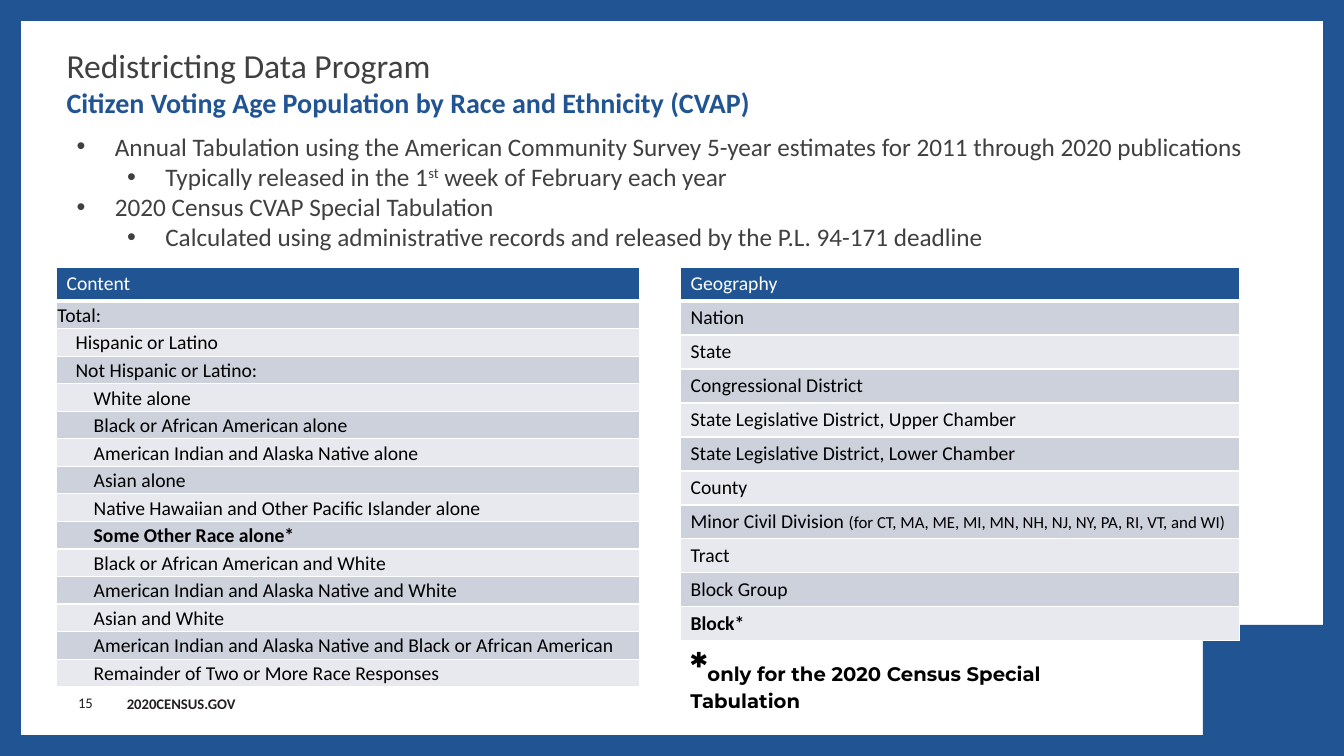
from lxml import etree
from pptx import Presentation
from pptx.dml.color import RGBColor
from pptx.enum.shapes import MSO_SHAPE
from pptx.enum.text import MSO_ANCHOR, MSO_AUTO_SIZE, PP_ALIGN
from pptx.oxml.ns import qn
from pptx.util import Inches, Pt

BLUE = RGBColor(0x20, 0x54, 0x93)
WHITE = RGBColor(0xFF, 0xFF, 0xFF)
BLACK = RGBColor(0, 0, 0)
GREY = RGBColor(0x40, 0x40, 0x40)
INK = RGBColor(0x23, 0x1F, 0x20)
BANDS = [RGBColor(0xCD, 0xD1, 0xDC), RGBColor(0xE8, 0xE9, 0xEE)]
RECTANGLE = MSO_SHAPE.RECTANGLE
TOP, MIDDLE, BOTTOM = MSO_ANCHOR.TOP, MSO_ANCHOR.MIDDLE, MSO_ANCHOR.BOTTOM
LEFT, RIGHT = PP_ALIGN.LEFT, PP_ALIGN.RIGHT
NO_FIT = MSO_AUTO_SIZE.NONE

WIDTH, HEIGHT = 13.33, 7.5
FRAME = 0.21
LEFT_COLUMN, RIGHT_COLUMN, TABLE_TOP = 0.56, 6.75, 2.65
HEADER_HEIGHT, CONTENT_ROW, GEOGRAPHY_ROW = 0.33, 0.27, 0.33
CELL_INSET, LEVEL_INDENT = 0.01, 0.18


def style(font, size, color, bold=False, name="Calibri"):
    font.size, font.bold, font.name = Pt(size), bold, name
    font.color.rgb = color


def fill_cell(cell, color, bottom_width=1):
    """Fill a cell and give it white borders."""
    cell.fill.solid()
    cell.fill.fore_color.rgb = color
    properties = cell._tc.get_or_add_tcPr()
    for place, side in enumerate(("lnL", "lnR", "lnT", "lnB")):
        width = bottom_width if side == "lnB" else 1
        line = etree.Element(qn(f"a:{side}"), w=str(Pt(width)))
        solid = etree.SubElement(line, qn("a:solidFill"))
        etree.SubElement(solid, qn("a:srgbClr"), val=str(WHITE))
        properties.insert(place, line)


deck = Presentation()
deck.slide_width, deck.slide_height = Inches(WIDTH), Inches(HEIGHT)
page = deck.slides.add_slide(deck.slide_layouts[1])
page.background.fill.solid()
page.background.fill.fore_color.rgb = BLUE
title, body = page.shapes.title, page.placeholders[1]

# White panel and blue corner, behind the placeholders
for x, y, w, h, color in (
    (FRAME, FRAME, WIDTH - 2 * FRAME, HEIGHT - 2 * FRAME, WHITE),
    (WIDTH - 1.4, HEIGHT - 1.3, 1.4, 1.3, BLUE),
):
    panel = page.shapes.add_shape(RECTANGLE, Inches(x), Inches(y), Inches(w), Inches(h))
    panel.shadow.inherit = False
    panel.fill.solid()
    panel.fill.fore_color.rgb = color
    panel.line.fill.background()
    title.element.addprevious(panel.element)

# Title and bullets
for box, x, y, w, h in ((title, LEFT_COLUMN, 0.4, 9.58, 0.84), (body, 0.66, 1.25, 12.27, 1.31)):
    box.left, box.top, box.width, box.height = Inches(x), Inches(y), Inches(w), Inches(h)
    box.text_frame.vertical_anchor = TOP
    box.text_frame.auto_size = NO_FIT

para = title.text_frame.paragraphs[0]
para.alignment = LEFT
span = para.add_run()
span.text = "Redistricting Data Program"
style(span.font, 24, GREY)
para.add_line_break()
span = para.add_run()
span.text = "Citizen Voting Age Population by Race and Ethnicity (CVAP)"
style(span.font, 20, BLUE, bold=True)

BULLETS = [
    (0, ["Annual Tabulation using the American Community Survey 5-year estimates "
         "for 2011 through 2020 publications"]),
    (1, ["Typically released in the 1", "st", " week of February each year"]),
    (0, ["2020 Census CVAP Special Tabulation"]),
    (1, ["Calculated using administrative records and released by the P.L. 94-171 deadline"]),
]
frame = body.text_frame
for number, (level, pieces) in enumerate(BULLETS):
    para = frame.add_paragraph() if number else frame.paragraphs[0]
    para.level = level
    para.space_before = Pt(0)
    properties = para._p.get_or_add_pPr()
    properties.set("marL", str(Inches(0.38 + 0.5 * level)))
    properties.set("indent", str(Inches(-0.38)))
    etree.SubElement(properties, qn("a:buChar"), char="•")
    style(para.font, 18, GREY)
    for piece in pieces:
        span = para.add_run()
        span.text = piece
        if piece == "st":
            span.font._element.set("baseline", "30000")

# Tables: each row is indent level, text, small text
CONTENT = [
    (0, "Total:", ""),
    (1, "Hispanic or Latino", ""),
    (1, "Not Hispanic or Latino:", ""),
    (2, "White alone", ""),
    (2, "Black or African American alone", ""),
    (2, "American Indian and Alaska Native alone", ""),
    (2, "Asian alone", ""),
    (2, "Native Hawaiian and Other Pacific Islander alone", ""),
    (2, "Some Other Race alone*", ""),
    (2, "Black or African American and White", ""),
    (2, "American Indian and Alaska Native and White", ""),
    (2, "Asian and White", ""),
    (2, "American Indian and Alaska Native and Black or African American", ""),
    (2, "Remainder of Two or More Race Responses", ""),
]
GEOGRAPHY = [
    (0, "Nation", ""),
    (0, "State", ""),
    (0, "Congressional District", ""),
    (0, "State Legislative District, Upper Chamber", ""),
    (0, "State Legislative District, Lower Chamber", ""),
    (0, "County", ""),
    (0, "Minor Civil Division ", "(for CT, MA, ME, MI, MN, NH, NJ, NY, PA, RI, VT, and WI)"),
    (0, "Tract", ""),
    (0, "Block Group", ""),
    (0, "Block*", ""),
]
for heading, entries, x, w, row_height, compact in (
    ("Content", CONTENT, LEFT_COLUMN, 5.78, CONTENT_ROW, True),
    ("Geography", GEOGRAPHY, RIGHT_COLUMN, 5.54, GEOGRAPHY_ROW, False),
):
    height = HEADER_HEIGHT + row_height * len(entries)
    table = page.shapes.add_table(
        len(entries) + 1, 1, Inches(x), Inches(TABLE_TOP), Inches(w), Inches(height)
    ).table
    table.rows[0].height = Inches(HEADER_HEIGHT)
    header = table.cell(0, 0)
    header.text = heading
    fill_cell(header, BLUE, bottom_width=3)
    style(header.text_frame.paragraphs[0].font, 14, WHITE)
    for row, (level, text, small_text) in enumerate(entries, 1):
        table.rows[row].height = Inches(row_height)
        cell = table.cell(row, 0)
        cell.text = text
        fill_cell(cell, BANDS[(row - 1) % 2])
        para = cell.text_frame.paragraphs[0]
        if compact:
            cell.margin_left = Inches(CELL_INSET + LEVEL_INDENT * level)
            cell.margin_right = cell.margin_top = cell.margin_bottom = Inches(CELL_INSET)
            cell.vertical_anchor = BOTTOM
            para.line_spacing = 1.07
        style(para.font, 14, BLACK, bold=text.endswith("*"))
        if small_text:
            span = para.add_run()
            span.text = small_text
            span.font.size = Pt(12)

# Footnote, page number and web address: each piece is text, size, bold
for x, y, w, h, pieces, font_name, color, align, anchor, wrap in (
    (RIGHT_COLUMN, 6.32, 4.53, 0.57,
     [("*", 28, True), ("only for the 2020 Census Special Tabulation", 14, True)],
     "Montserrat", BLACK, LEFT, TOP, True),
    (0.35, 6.77, 0.67, 0.4, [("15", 10.5, False)], "Calibri", INK, RIGHT, MIDDLE, True),
    (1.16, 6.84, 1.31, 0.28, [("2020CENSUS.GOV", 10.5, True)], "Calibri", INK, LEFT, TOP, False),
):
    box = page.shapes.add_textbox(Inches(x), Inches(y), Inches(w), Inches(h))
    box.text_frame.word_wrap = wrap
    box.text_frame.vertical_anchor = anchor
    para = box.text_frame.paragraphs[0]
    para.alignment = align
    for text, size, bold in pieces:
        span = para.add_run()
        span.text = text
        style(span.font, size, color, bold, font_name)

deck.save("out.pptx")
